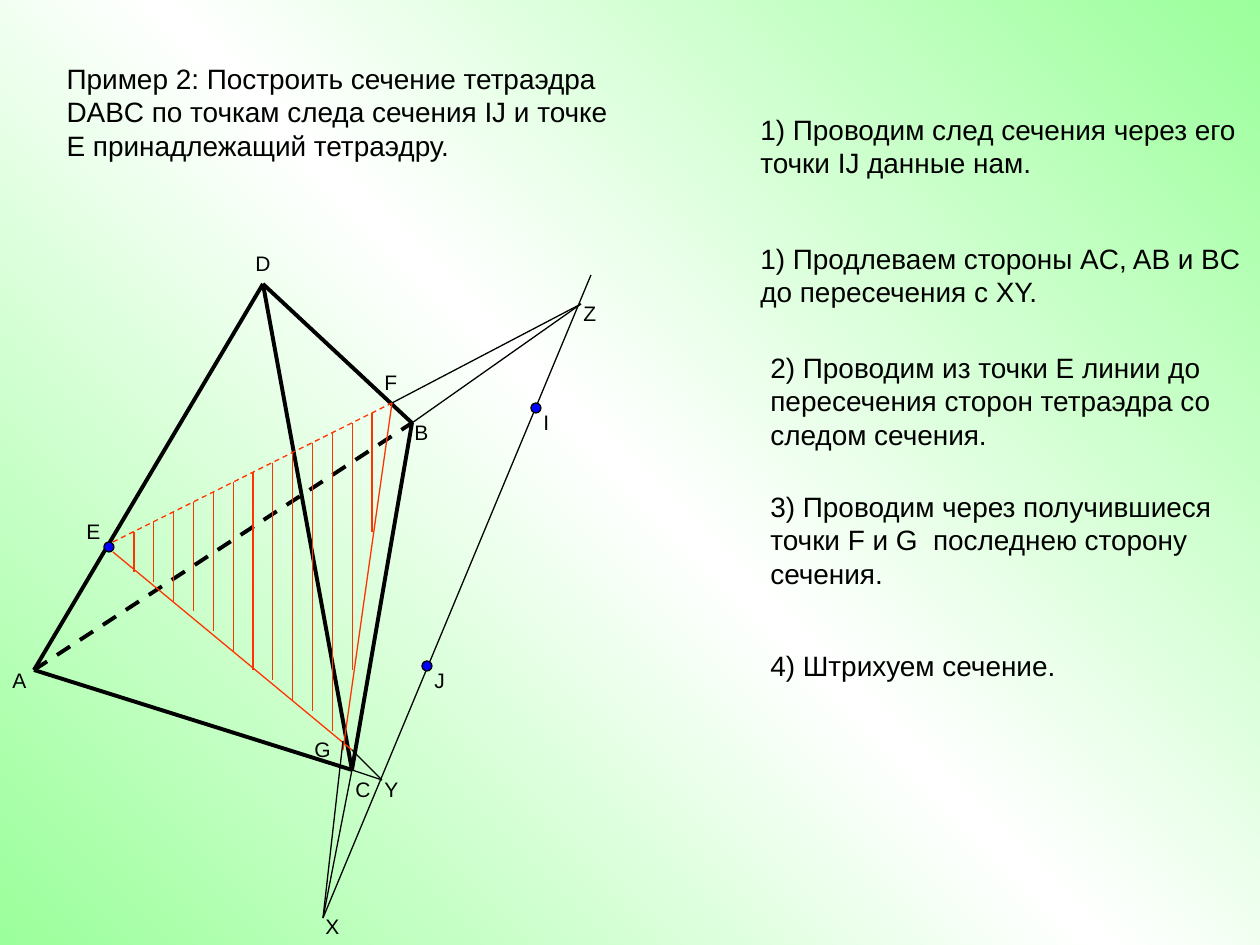
"""Slide: building the section of tetrahedron DABC from its trace IJ and point E."""
from copy import deepcopy

from pptx import Presentation
from pptx.dml.color import RGBColor
from pptx.enum.dml import MSO_LINE_DASH_STYLE as DASH
from pptx.enum.shapes import MSO_CONNECTOR, MSO_SHAPE
from pptx.enum.text import MSO_ANCHOR, MSO_AUTO_SIZE, PP_ALIGN
from pptx.oxml.ns import qn
from pptx.util import Pt

PX = 914400 // 126
FONT = "Arial"
COLORS = {"ink": "000000", "section": "FF3300", "dot": "0000FF",
          "green": "9BFF9B", "white": "FFFFFF"}
BACKGROUND = [(0, "green"), (0.5, "white"), (1, "green")]

TITLE = ("Пример 2: Построить сечение тетраэдра DABC по точкам следа сечения IJ "
         "и точке E принадлежащий тетраэдру.", (54, 55, 586, 114))
STEPS = [
    ("1) Проводим след сечения через его точки IJ данные нам.", (748, 106, 512, 80)),
    ("1) Продлеваем стороны AC, AB и BC до пересечения с XY.", (748, 235, 512, 80)),
    ("2) Проводим из точки Е линии до пересечения сторон тетраэдра со следом сечения.",
     (758, 344, 502, 114)),
    ("3) Проводим через получившиеся точки F и G  последнею сторону сечения.",
     (758, 483, 502, 114)),
    ("4) Штрихуем сечение.", (758, 642, 502, 46)),
]

POINTS = {
    "A": (34, 670), "B": (412, 423), "C": (352, 770), "D": (263, 284),
    "F": (392, 403), "G": (352, 750), "X": (323, 918), "Y": (382, 780),
    "Z": (581, 304), "trace end": (591, 275), "E upper": (113, 542),
    "E lower": (113, 552), "FG end": (343, 750), "GX start": (343, 741),
}
LINES = [
    ("D", "A", "ink", 2.25, False), ("A", "B", "ink", 2.25, True),
    ("D", "B", "ink", 2.25, False), ("D", "C", "ink", 2.25, False),
    ("A", "C", "ink", 2.25, False), ("B", "C", "ink", 2.25, False),
    ("X", "trace end", "ink", 0.75, False), ("C", "Y", "ink", 0.75, False),
    ("B", "Z", "ink", 0.75, False), ("E lower", "G", "section", 0.75, False),
    ("E upper", "F", "section", 0.75, True), ("F", "Z", "ink", 0.75, False),
    ("G", "Y", "ink", 0.75, False), ("C", "X", "ink", 0.75, False),
    ("F", "FG end", "section", 0.75, False), ("GX start", "X", "ink", 0.75, False),
]
HATCH_LEFT, HATCH_TOP, HATCH_STEP = 134, 532, 19.84
HATCH_BOTTOMS = [572, 582, 601, 611, 631, 651, 670, 680, 701, 711, 731, 670, 532]

DOT_SIZE = 10
DOTS = [(104, 542), (531, 403), (422, 661)]
LABELS = [
    ("D", 243, 244, 39), ("A", 0, 661, 44), ("B", 402, 413, 39), ("C", 343, 770, 39),
    ("E", 74, 512, 40), ("X", 313, 907, 39), ("Y", 372, 770, 39), ("Z", 571, 294, 39),
    ("F", 372, 363, 39), ("G", 302, 730, 49), ("I", 531, 403, 49), ("J", 422, 661, 49),
]
LABEL_HEIGHT = 38


def emu(*lengths):
    return [round(length * PX) for length in lengths]


def color(name):
    return RGBColor.from_string(COLORS[name])


def paint_background(page):
    fill = page.background.fill
    fill.gradient()
    fill.gradient_angle = 45
    stop_list = page.element.find(".//" + qn("a:gsLst"))
    stop_list.append(deepcopy(stop_list[0]))
    for stop, (position, name) in zip(fill.gradient_stops, BACKGROUND):
        stop.position = position
        stop.color.rgb = color(name)


def add_line(page, start, end, name, width, dashed=False):
    line = page.shapes.add_connector(MSO_CONNECTOR.STRAIGHT, *emu(*start, *end))
    line.line.color.rgb = color(name)
    line.line.width = Pt(width)
    if dashed:
        line.line.dash_style = DASH.DASH
    properties = line.element.spPr
    properties.append(properties.makeelement(qn("a:effectLst"), {}))


def add_dot(page, left, top):
    dot = page.shapes.add_shape(MSO_SHAPE.OVAL, *emu(left, top, DOT_SIZE, DOT_SIZE))
    dot.shadow.inherit = False
    dot.fill.solid()
    dot.fill.fore_color.rgb = color("dot")
    dot.line.color.rgb = color("ink")
    dot.line.width = Pt(0.75)


def write(box, text, size):
    frame = box.text_frame
    frame.word_wrap = True
    frame.auto_size = MSO_AUTO_SIZE.NONE
    frame.vertical_anchor = MSO_ANCHOR.TOP
    para = frame.paragraphs[0]
    para.alignment = PP_ALIGN.LEFT
    span = para.add_run()
    span.text = text
    span.font.size = Pt(size)
    span.font.name = FONT
    span.font.color.rgb = color("ink")


def add_text(page, text, area, size):
    write(page.shapes.add_textbox(*emu(*area)), text, size)


def main():
    deck = Presentation()
    deck.slide_width, deck.slide_height = emu(1260, 945)
    page = deck.slides.add_slide(deck.slide_layouts[5])
    paint_background(page)

    text, area = TITLE
    title = page.shapes.title
    title.left, title.top, title.width, title.height = emu(*area)
    write(title, text, 16)

    for start, end, name, width, dashed in LINES:
        add_line(page, POINTS[start], POINTS[end], name, width, dashed)
    for index, bottom in enumerate(HATCH_BOTTOMS):
        x = HATCH_LEFT + index * HATCH_STEP
        top = HATCH_TOP - index * HATCH_STEP / 2
        add_line(page, (x, top), (x, bottom), "section", 0.75)
    for left, top in DOTS:
        add_dot(page, left, top)
    for letter, left, top, width in LABELS:
        add_text(page, letter, (left, top, width, LABEL_HEIGHT), 12)
    for text, area in STEPS:
        add_text(page, text, area, 16)

    deck.save("out.pptx")


if __name__ == "__main__":
    main()
